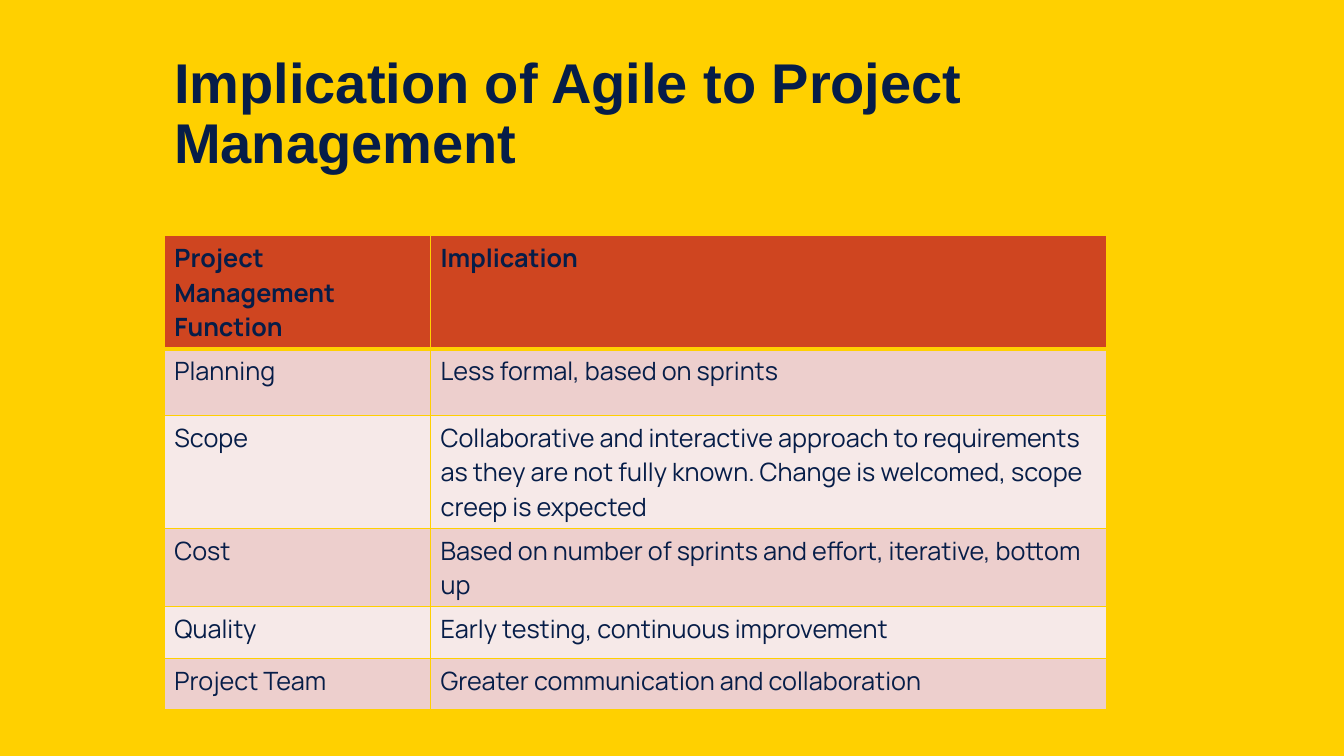
"""Build the slide on what Agile implies for project management."""
from lxml import etree
from pptx import Presentation
from pptx.dml.color import RGBColor
from pptx.enum.text import MSO_ANCHOR
from pptx.oxml.ns import qn
from pptx.util import Inches, Pt

MIDDLE = MSO_ANCHOR.MIDDLE
GOLD, NAVY, RED = "FFD000", "061D48", "CF4520"
BANDS = ["F6E9E8", "EDCFCD"]
ROWS = [
    ("Project Management Function", "Implication"),
    ("Planning", "Less formal, based on sprints"),
    ("Scope", "Collaborative and interactive approach to requirements as they "
     "are not fully known. Change is welcomed, scope creep is expected"),
    ("Cost", "Based on number of sprints and effort, iterative, bottom up"),
    ("Quality", "Early testing, continuous improvement"),
    ("Project Team", "Greater communication and collaboration"),
]
WIDTHS = [2.64, 6.71]
HEIGHTS = [1.12, 0.66, 1.12, 0.78, 0.51, 0.51]


def color(code):
    return RGBColor.from_string(code)


def style(para, name, size, bold):
    font = para.font
    font.name, font.size, font.bold = name, Pt(size), bold
    font.color.rgb = color(NAVY)


deck = Presentation()
deck.slide_width, deck.slide_height = Inches(13.33), Inches(7.5)
slide = deck.slides.add_slide(deck.slide_layouts[6])
slide.background.fill.solid()
slide.background.fill.fore_color.rgb = color(GOLD)

title = slide.shapes.add_textbox(Inches(1.63), Inches(0.42), Inches(10.2), Inches(1.45))
frame = title.text_frame
frame.word_wrap = True
frame.vertical_anchor = MIDDLE
head = frame.paragraphs[0]
head.text = "Implication of Agile to Project Management"
head.line_spacing = 0.9
style(head, "Arial", 40, True)

table = slide.shapes.add_table(len(ROWS), len(WIDTHS), Inches(1.63), Inches(2.34),
                               Inches(sum(WIDTHS)), Inches(sum(HEIGHTS))).table
for col, width in zip(table.columns, WIDTHS):
    col.width = Inches(width)
for r, (texts, height) in enumerate(zip(ROWS, HEIGHTS)):
    table.rows[r].height = Inches(height)
    for c, text in enumerate(texts):
        cell = table.cell(r, c)
        props = cell._tc.get_or_add_tcPr()
        for side in "LRTB":
            thick = (r, side) in [(0, "B"), (1, "T")]
            line = etree.SubElement(props, qn("a:ln" + side), w=str(Pt(3 if thick else 1)))
            fill = etree.SubElement(line, qn("a:solidFill"))
            etree.SubElement(fill, qn("a:srgbClr"), val=GOLD)
        cell.fill.solid()
        cell.fill.fore_color.rgb = color(BANDS[r % 2] if r else RED)
        cell.text = text
        style(cell.text_frame.paragraphs[0], "Manrope", 18, r == 0)

deck.save("out.pptx")
